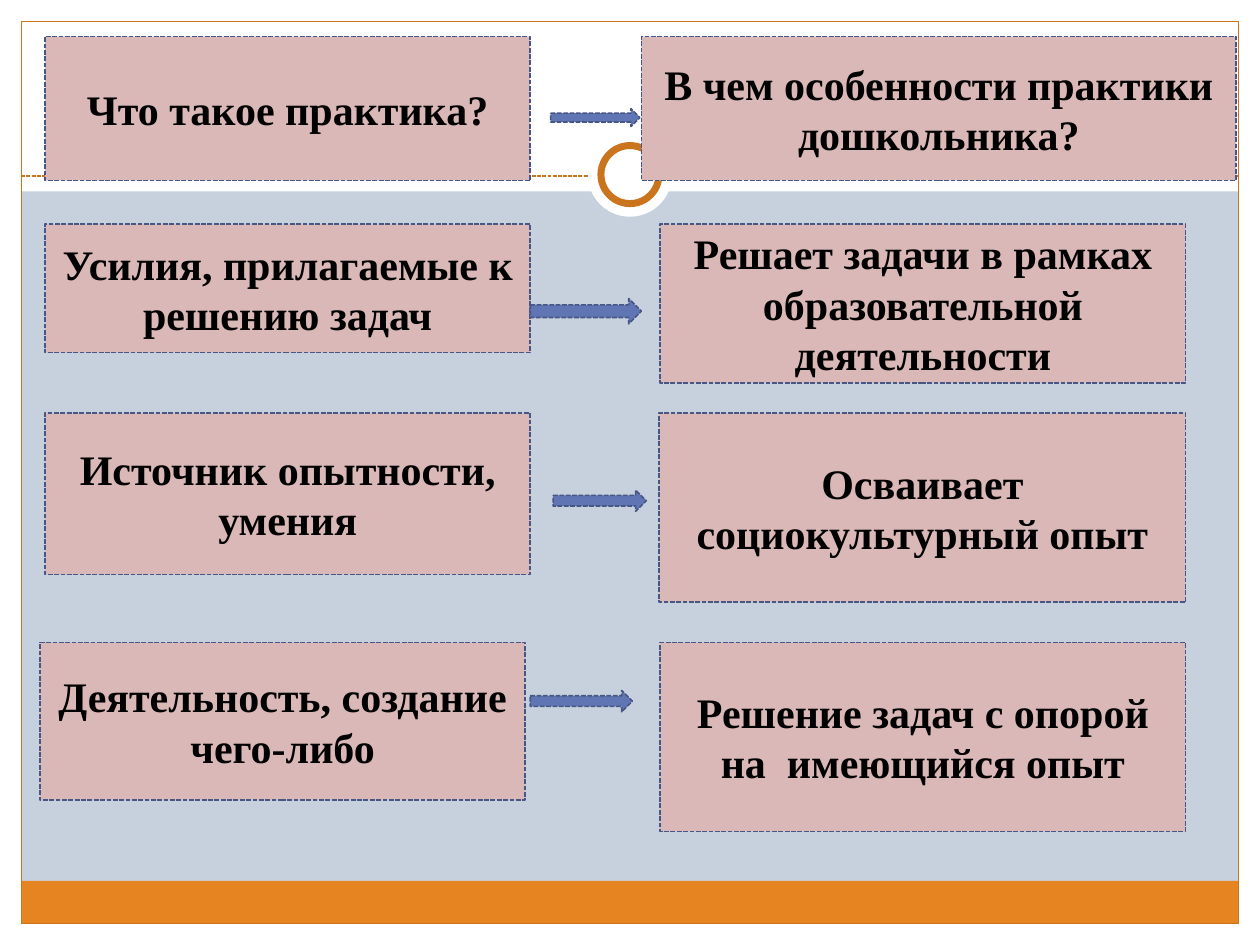
import pptx
import pptx.util
import pptx.dml.color
import pptx.enum.dml
import pptx.enum.shapes
import pptx.enum.text
from dataclasses import dataclass
from pptx.util import Cm, Pt

SHAPE = pptx.enum.shapes.MSO_SHAPE
DASH = pptx.enum.dml.MSO_LINE.SQUARE_DOT


@dataclass(frozen=True)
class Theme:
    background: str = "C7D1DE"
    white: str = "FFFFFF"
    band: str = "E68422"
    accent: str = "CB741E"
    card: str = "DAB8B8"
    card_line: str = "475785"
    arrow: str = "6076B4"
    text: str = "000000"
    font: str = "Times New Roman"
    size: int = 24
    thin: float = 0.75
    outline: float = 0.9
    ring: float = 4


THEME = Theme()


def rgb(value):
    return pptx.dml.color.RGBColor.from_string(value)


def set_line(line, color, width, dash=None):
    line.color.rgb = rgb(color)
    line.width = Pt(width)
    if dash:
        line.dash_style = dash


def add_shape(s, kind, box, fill=None, line=None, width=0, dash=None):
    sp = s.shapes.add_shape(kind, *(Cm(v) for v in box))
    sp.shadow.inherit = False
    if fill:
        sp.fill.solid()
        sp.fill.fore_color.rgb = rgb(fill)
    else:
        sp.fill.background()
    if line:
        set_line(sp.line, line, width, dash)
    else:
        sp.line.fill.background()
    return sp


def add_circle(s, cx, cy, d, **style):
    add_shape(s, SHAPE.OVAL, (cx - d / 2, cy - d / 2, d, d), **style)


def add_frame(s, box, margin=0.43, header=3.86, footer=0.86):
    x, y, w, h = box
    right, bottom = x + w - margin, y + h - margin
    rule_y = y + 3.55
    add_shape(s, SHAPE.RECTANGLE, (x, y, w, header), THEME.white)

    rule = s.shapes.add_connector(
        pptx.enum.shapes.MSO_CONNECTOR.STRAIGHT,
        Cm(x + margin), Cm(rule_y), Cm(right), Cm(rule_y))
    set_line(rule.line, THEME.accent, THEME.thin, DASH)
    pptx.oxml.xmlchemy.OxmlElement
    rule._element.spPr.append(pptx.oxml.xmlchemy.OxmlElement("a:effectLst"))

    cx, cy = x + w / 2, y + 3.52
    add_circle(s, cx, cy, 1.7, fill=THEME.white)
    add_circle(s, cx, cy, 1.17, fill=THEME.white,
               line=THEME.accent, width=THEME.ring)

    for edge in ((x, bottom, w, margin), (x, y, w, margin),
                 (right, y, margin, h), (x, y, margin, h)):
        add_shape(s, SHAPE.RECTANGLE, edge, THEME.white)
    inner_w = w - 2 * margin
    add_shape(s, SHAPE.RECTANGLE,
              (x + margin, bottom - footer, inner_w, footer), THEME.band)
    add_shape(s, SHAPE.RECTANGLE,
              (x + margin, y + margin, inner_w, h - 2 * margin),
              line=THEME.accent, width=THEME.thin)


def add_card(s, box, text):
    sp = add_shape(s, SHAPE.RECTANGLE, box, THEME.card,
                   THEME.card_line, THEME.outline, DASH)
    tf = sp.text_frame
    tf.word_wrap = True
    tf.vertical_anchor = pptx.enum.text.MSO_ANCHOR.MIDDLE
    p = tf.paragraphs[0]
    p.text = text
    p.alignment = pptx.enum.text.PP_ALIGN.CENTER
    p.font.name = THEME.font
    p.font.size = Pt(THEME.size)
    p.font.bold = True
    p.font.color.rgb = rgb(THEME.text)


def add_row(s, box, left_h, right_w, arrow, left_text, right_text, left_w=9.78):
    x, y, w, h = box
    add_card(s, (x, y, left_w, left_h), left_text)
    add_card(s, (x + w - right_w, y, right_w, h), right_text)
    dx, dy, arrow_w, arrow_h = arrow
    add_shape(s, SHAPE.RIGHT_ARROW,
              (x + left_w + dx, y + dy, arrow_w, arrow_h),
              THEME.arrow, THEME.card_line, THEME.outline, DASH)


ROWS = [
    ((0.91, 0.74, 24.01, 2.9), 2.9, 11.99, (0.41, 1.45, 1.8, 0.36),
     "Что такое практика?", "В чем особенности практики дошкольника?"),
    ((0.91, 4.52, 22.99, 3.2), 2.59, 10.59, (0, 1.5, 2.24, 0.51),
     "Усилия, прилагаемые к решению задач",
     "Решает задачи в рамках образовательной деятельности"),
    ((0.91, 8.33, 22.99, 3.81), 3.25, 10.61, (0.46, 1.55, 1.88, 0.43),
     "Источник опытности, умения", "Осваивает социокультурный опыт"),
    ((0.81, 12.95, 23.09, 3.81), 3.18, 10.59, (0.1, 0.97, 2.06, 0.43),
     "Деятельность, создание чего-либо",
     "Решение задач с опорой на  имеющийся опыт"),
]


def main():
    prs = pptx.Presentation()
    prs.slide_width, prs.slide_height = Cm(25.4), Cm(19.05)
    s = prs.slides.add_slide(prs.slide_layouts[6])
    s.background.fill.solid()
    s.background.fill.fore_color.rgb = rgb(THEME.background)
    add_frame(s, (0, 0, 25.4, 19.05))
    for row in ROWS:
        add_row(s, *row)
    prs.save("out.pptx")


if __name__ == "__main__":
    main()
